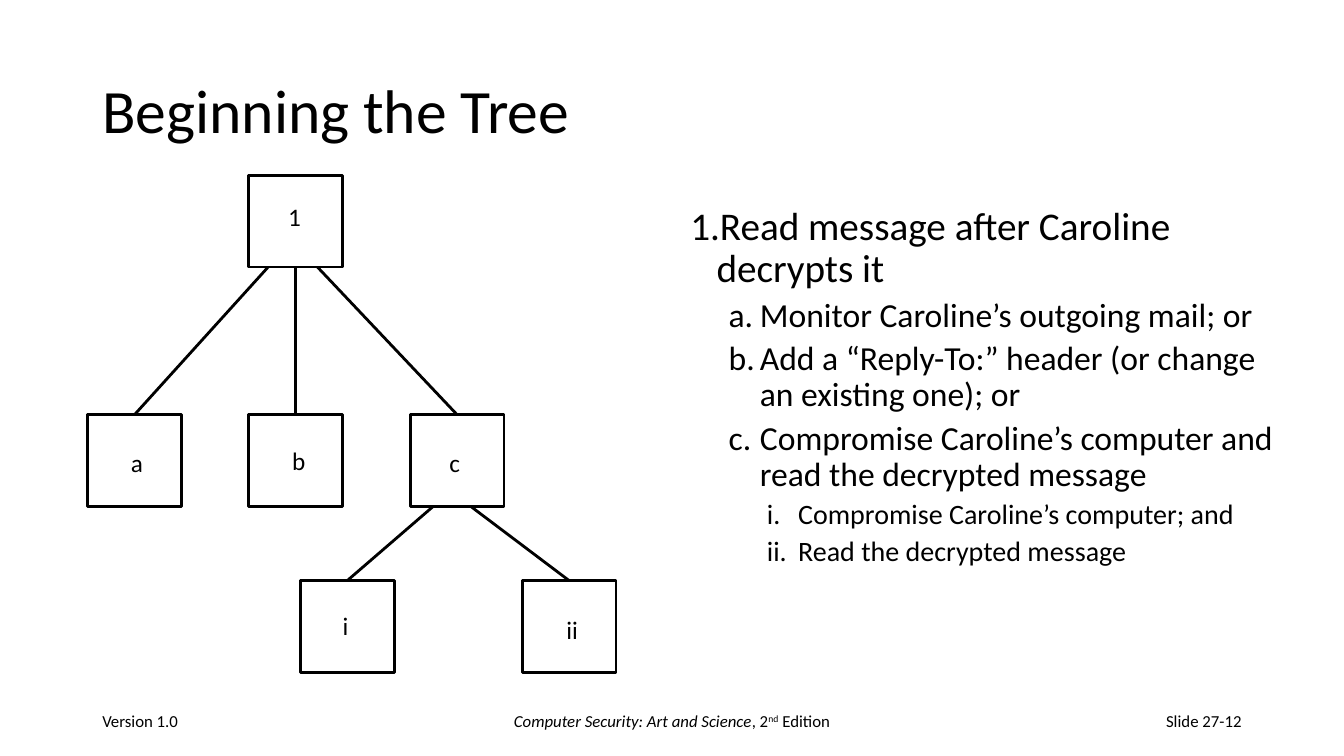
from lxml.etree import SubElement
from pptx import Presentation
from pptx.dml.color import RGBColor
from pptx.enum.shapes import MSO_CONNECTOR as Connector, MSO_SHAPE as Shape
from pptx.enum.text import MSO_ANCHOR as Anchor, MSO_AUTO_SIZE as AutoSize, PP_ALIGN as Align
from pptx.oxml.ns import qn
from pptx.util import Pt

BLACK = RGBColor(0, 0, 0)
FONT = "Calibri"
NODE_WIDTH, NODE_HEIGHT = 67, 65.5
LINE_WIDTH = 2

NODES = {
    "1": (177.8, 125.3, 198.7, 140.4, 23.8),
    "a": (62.6, 296.2, 86.4, 316.1, 23.8),
    "b": (177.8, 296.2, 201.6, 314.6, 24.5),
    "c": (293, 296.2, 313.9, 316.1, 22.3),
    "i": (214.6, 414.7, 237.6, 432.7, 18.7),
    "ii": (373, 414.7, 397.4, 434.9, 23),
}
BRANCHES = [("1", "a", -19.8), ("1", "b", 0), ("1", "c", 15.5), ("c", "i", -17), ("c", "ii", 9.7)]

LEVELS = [
    (28, 18.7, -18.7, 10, "arabicPeriod"),
    (24, 49.7, -22.3, 5, "alphaLcPeriod"),
    (20, 77, -22.3, 5, "romanLcPeriod"),
]
STEPS = [
    (0, "Read message after Caroline decrypts it"),
    (1, "Monitor Caroline’s outgoing mail; or"),
    (1, "Add a “Reply-To:” header (or change an existing one); or"),
    (1, "Compromise Caroline’s computer and read the decrypted message"),
    (2, "Compromise Caroline’s computer; and"),
    (2, "Read the decrypted message"),
]


def set_font(paragraph, size):
    paragraph.font.name = FONT
    paragraph.font.size = Pt(size)
    paragraph.font.color.rgb = BLACK


def add_text(slide, text, left, top, width, height, size, align=Align.LEFT, anchor=Anchor.MIDDLE):
    box = slide.shapes.add_textbox(Pt(left), Pt(top), Pt(width), Pt(height))
    frame = box.text_frame
    frame.word_wrap = True
    frame.vertical_anchor = anchor
    paragraph = frame.paragraphs[0]
    paragraph.text = text
    paragraph.alignment = align
    set_font(paragraph, size)
    return box


def add_steps(slide):
    box = slide.shapes.add_textbox(Pt(486), Pt(144), Pt(440.6), Pt(342.7))
    frame = box.text_frame
    frame.word_wrap = True
    for index, (level, text) in enumerate(STEPS):
        size, margin, indent, space, numbering = LEVELS[level]
        paragraph = frame.add_paragraph() if index else frame.paragraphs[0]
        paragraph.text = text
        paragraph.level = level
        paragraph.line_spacing = 0.9
        paragraph.space_before = Pt(space if index else 0)
        properties = paragraph._p.get_or_add_pPr()
        properties.set("marL", str(Pt(margin)))
        properties.set("indent", str(Pt(indent)))
        SubElement(properties, qn("a:buFont"), typeface="+mj-lt")
        SubElement(properties, qn("a:buAutoNum"), type=numbering)
        set_font(paragraph, size)


def add_node(slide, left, top):
    node = slide.shapes.add_shape(Shape.RECTANGLE, Pt(left), Pt(top), Pt(NODE_WIDTH), Pt(NODE_HEIGHT))
    node.shadow.inherit = False
    node.fill.background()
    node.line.color.rgb = BLACK
    node.line.width = Pt(LINE_WIDTH)
    return node


def add_branch(slide, parent, child, offset):
    start = parent.left + parent.width // 2 + Pt(offset)
    end = child.left + child.width // 2
    branch = slide.shapes.add_connector(
        Connector.STRAIGHT, start, parent.top + parent.height, end, child.top)
    if offset == 0:
        branch.begin_connect(parent, 2)
    branch.end_connect(child, 0)
    branch.line.color.rgb = BLACK
    branch.line.width = Pt(LINE_WIDTH)
    SubElement(branch._element.spPr, qn("a:effectLst"))


def add_tree(slide):
    nodes = {name: add_node(slide, left, top) for name, (left, top, *_) in NODES.items()}
    for parent, child, offset in BRANCHES:
        add_branch(slide, nodes[parent], nodes[child], offset)
    for name, (_, _, left, top, width) in NODES.items():
        label = add_text(slide, name, left, top, width, 29, 18, anchor=Anchor.TOP)
        label.text_frame.word_wrap = False
        label.text_frame.auto_size = AutoSize.SHAPE_TO_FIT_TEXT


def add_footer(slide):
    top, height, size = 500.5, 28.75, 12
    add_text(slide, "Version 1.0", 66, top, 216, height, size)
    book = add_text(slide, "", 318, top, 324, height, size, Align.CENTER)
    paragraph = book.text_frame.paragraphs[0]
    title, edition, ordinal, ending = [paragraph.add_run() for _ in range(4)]
    title.text = "Computer Security: Art and Science"
    title.font.italic = True
    edition.text = ", 2"
    ordinal.text = "nd"
    ordinal._r.get_or_add_rPr().set("baseline", "30000")
    ending.text = " Edition"
    add_text(slide, "Slide 27-12", 678, top, 216, height, size, Align.RIGHT)


def main():
    presentation = Presentation()
    presentation.slide_width = Pt(960)
    presentation.slide_height = Pt(540)
    slide = presentation.slides.add_slide(presentation.slide_layouts[6])
    heading = add_text(slide, "Beginning the Tree", 66, 28.75, 828, 104.4, 44)
    heading.text_frame.paragraphs[0].line_spacing = 0.9
    add_steps(slide)
    add_footer(slide)
    add_tree(slide)
    presentation.save("out.pptx")


if __name__ == "__main__":
    main()
